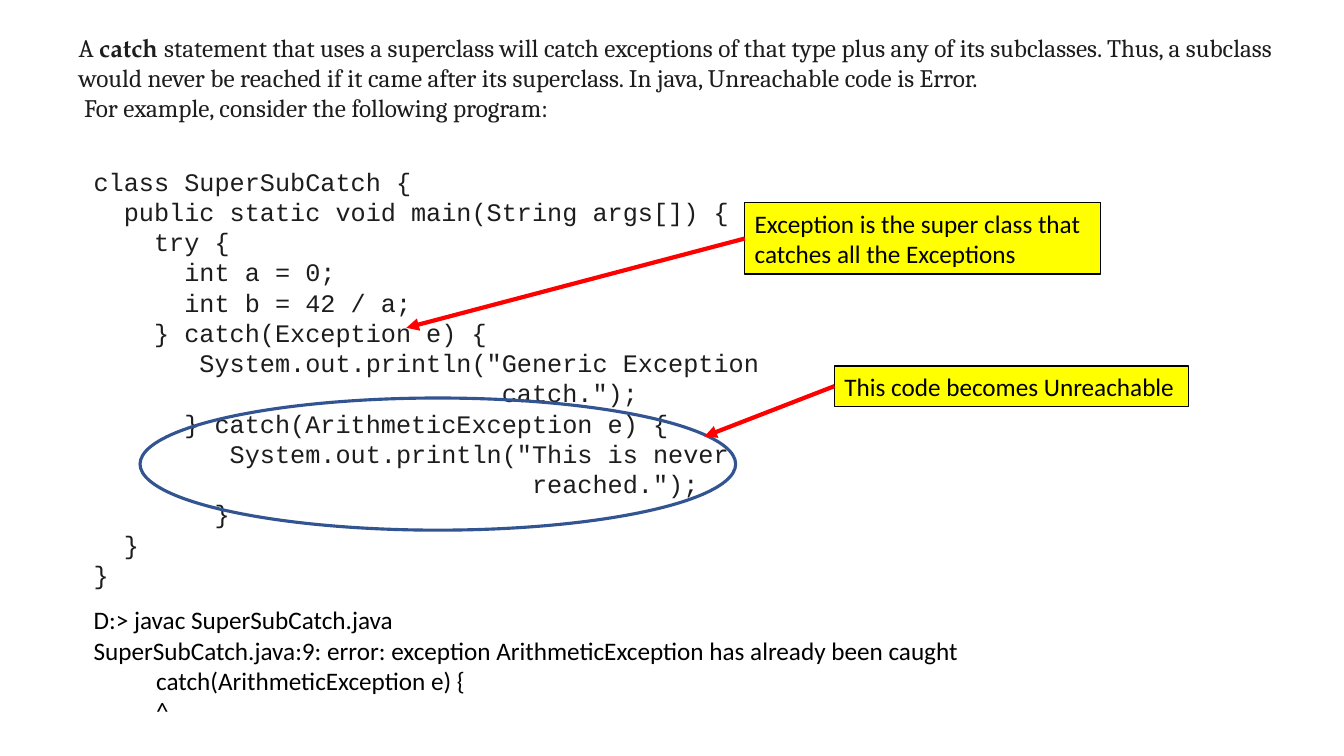
from lxml.etree import SubElement
from pptx import Presentation
from pptx.dml.color import RGBColor
from pptx.enum.shapes import MSO_CONNECTOR, MSO_SHAPE
from pptx.enum.text import MSO_ANCHOR, PP_ALIGN
from pptx.oxml.ns import qn
from pptx.util import Cm, Pt

INK = RGBColor(0x1D, 0x1D, 0x1E)
BLACK = RGBColor(0x00, 0x00, 0x00)
YELLOW = RGBColor(0xFF, 0xFF, 0x00)
RED = RGBColor(0xFF, 0x00, 0x00)
BLUE = RGBColor(0x32, 0x54, 0x91)

INTRO = [
    [("A ", False), ("catch ", True),
     ("statement that uses a superclass will catch exceptions of that type plus any of "
      "its subclasses. Thus, a subclass would never be reached if it came after its "
      "superclass. In java, Unreachable code is Error.", False)],
    [("For example, consider the following program:", False)],
]
CODE = '''class SuperSubCatch {
  public static void main(String args[]) {
    try {
      int a = 0;
      int b = 42 / a;
    } catch(Exception e) {
       System.out.println("Generic Exception
                           catch.");
      } catch(ArithmeticException e) {
         System.out.println("This is never
                             reached.");
        }
  }
}'''
CONSOLE = '''D:> javac SuperSubCatch.java
SuperSubCatch.java:9: error: exception ArithmeticException has already been caught
           catch(ArithmeticException e) {
           ^'''


def format_span(span, font_name, color):
    """Give a run its font, size and colour."""
    span.font.name = font_name
    span.font.size = Pt(18)
    span.font.color.rgb = color


def fill_text(shape, text, font_name, color):
    """Write left-aligned lines into a shape."""
    frame = shape.text_frame
    frame.word_wrap = True
    frame.text = text
    for para in frame.paragraphs:
        para.alignment = PP_ALIGN.LEFT
        for span in para.runs:
            format_span(span, font_name, color)


def add_intro(page, left, top, width, height):
    """Place the explanation with its bold keyword."""
    frame = page.shapes.add_textbox(left, top, width, height).text_frame
    frame.word_wrap = True
    for number, parts in enumerate(INTRO):
        para = frame.add_paragraph() if number else frame.paragraphs[0]
        for text, bold in parts:
            span = para.add_run()
            span.text = text
            format_span(span, "TeX Gyre Pagella" if bold else "Cambria", INK)
            span.font.bold = bold
    para._p.get_or_add_pPr().set("marL", str(Cm(0.14)))


def add_listing(page, text, font_name, color, left, top, width, height):
    """Place a block of code or console output."""
    box = page.shapes.add_textbox(left, top, width, height)
    fill_text(box, text, font_name, color)


def add_callout(page, text, left, top, width, height, reach, drop):
    """Place a yellow note and an arrow from its left side to the code."""
    note = page.shapes.add_shape(MSO_SHAPE.RECTANGLE, left, top, width, height)
    note.shadow.inherit = False
    note.fill.solid()
    note.fill.fore_color.rgb = YELLOW
    note.line.color.rgb = BLACK
    note.line.width = Pt(1)
    fill_text(note, text, "Calibri", BLACK)
    note.text_frame.margin_right = 0
    note.text_frame.vertical_anchor = MSO_ANCHOR.MIDDLE

    middle = top + height // 2
    arrow = page.shapes.add_connector(
        MSO_CONNECTOR.STRAIGHT, left, middle, left - reach, middle + drop)
    arrow.begin_connect(note, 1)
    arrow.line.color.rgb = RED
    arrow.line.width = Pt(3)
    SubElement(arrow.line._get_or_add_ln(), qn("a:tailEnd"), type="triangle")
    SubElement(arrow._element.spPr, qn("a:effectLst"))


def add_ring(page, left, top, width, height):
    """Circle the unreachable block."""
    ring = page.shapes.add_shape(MSO_SHAPE.OVAL, left, top, width, height)
    ring.shadow.inherit = False
    ring.fill.background()
    ring.line.color.rgb = BLUE
    ring.line.width = Pt(2.25)


def main():
    """Build and save the slide."""
    deck = Presentation()
    deck.slide_width, deck.slide_height = Cm(33.87), Cm(19.05)
    page = deck.slides.add_slide(deck.slide_layouts[6])
    add_intro(page, Cm(1.73), Cm(0.69), Cm(30.84), Cm(2.57))
    add_listing(page, CODE, "Courier New", INK, Cm(2.11), Cm(4.06), Cm(18.92), Cm(11.02))
    add_listing(page, CONSOLE, "Calibri", BLACK, Cm(2.11), Cm(15.11), Cm(26.7), Cm(3.33))
    add_callout(page, "Exception is the super class that\ncatches all the Exceptions",
                Cm(18.77), Cm(5.11), Cm(8.97), Cm(1.8), Cm(8.53), Cm(2.25))
    add_ring(page, Cm(3.53), Cm(10.03), Cm(15.01), Cm(3.33))
    add_callout(page, "This code becomes Unreachable",
                Cm(21.03), Cm(9.22), Cm(8.92), Cm(1.02), Cm(3.28), Cm(1.27))
    deck.save("out.pptx")


if __name__ == "__main__":
    main()
